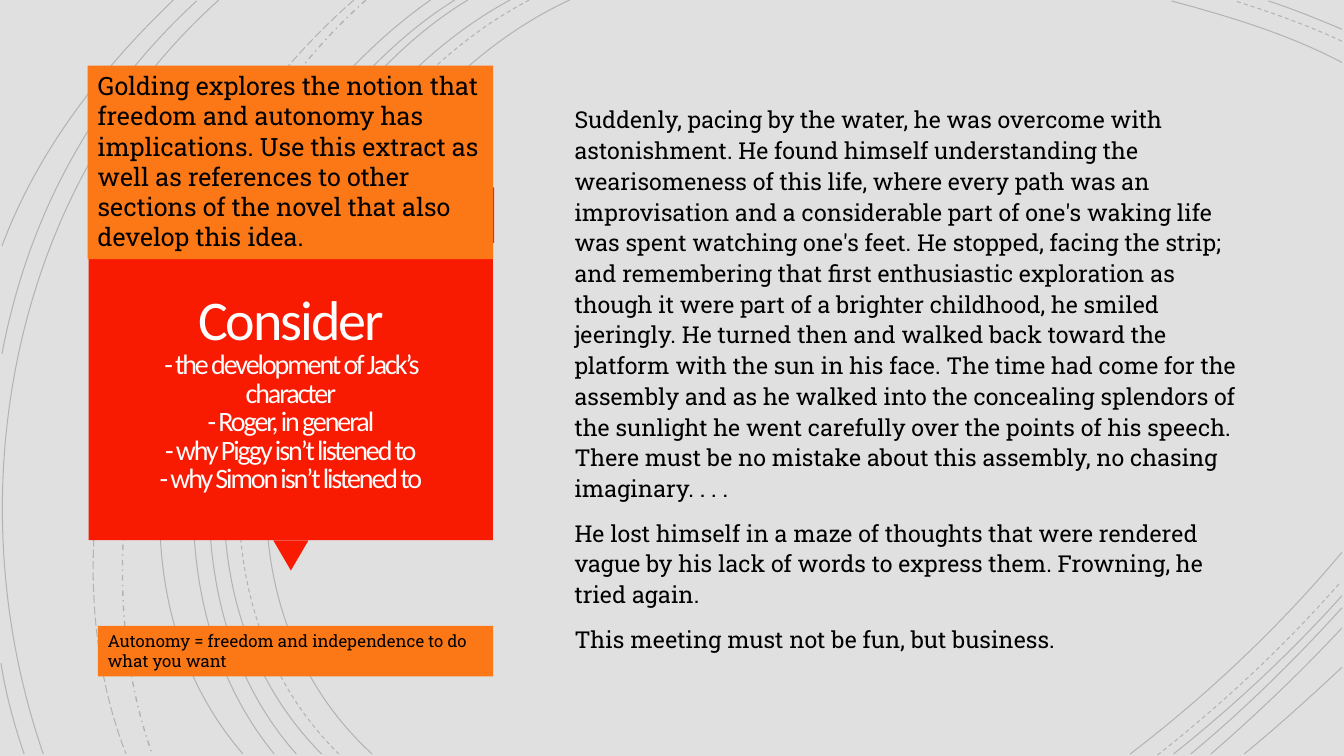
from lxml import etree
from pptx import Presentation
from pptx.dml.color import RGBColor
from pptx.enum.dml import MSO_LINE
from pptx.enum.shapes import MSO_SHAPE
from pptx.enum.text import MSO_ANCHOR, MSO_AUTO_SIZE, PP_ALIGN
from pptx.oxml.ns import qn
from pptx.util import Inches, Pt

SOLID, DASH = MSO_LINE.SOLID, MSO_LINE.DASH
DASH_DOT, LONG_DASH = MSO_LINE.DASH_DOT, MSO_LINE.LONG_DASH
RECTANGLE, TRIANGLE = MSO_SHAPE.RECTANGLE, MSO_SHAPE.ISOSCELES_TRIANGLE
TOP, MIDDLE = MSO_ANCHOR.TOP, MSO_ANCHOR.MIDDLE
LEFT, CENTER = PP_ALIGN.LEFT, PP_ALIGN.CENTER
GROW, FIXED = MSO_AUTO_SIZE.SHAPE_TO_FIT_TEXT, MSO_AUTO_SIZE.NONE

COLORS = {"back": "E0E0E0", "red": "F81B02", "orange": "FC7715",
          "white": "FFFEFF", "black": "000000"}
SLAB, SANS = "Roboto Slab", "Calibri"

TASK = ("Golding explores the notion that freedom and autonomy has implications. "
        "Use this extract as well as references to other sections of the novel "
        "that also develop this idea.")
DEFINITION = "Autonomy = freedom and independence to do what you want"
CONSIDER = [("Consider", 40),
            ("- the development of Jack’s character", 20),
            ("- Roger, in general", 20),
            ("- why Piggy isn’t listened to", 20),
            ("- why Simon isn’t listened to", 20)]
EXTRACT = [
    "Suddenly, pacing by the water, he was overcome with astonishment. He found "
    "himself understanding the wearisomeness of this life, where every path was an "
    "improvisation and a considerable part of one's waking life was spent watching "
    "one's feet. He stopped, facing the strip; and remembering that first "
    "enthusiastic exploration as though it were part of a brighter childhood, he "
    "smiled jeeringly. He turned then and walked back toward the platform with the "
    "sun in his face. The time had come for the assembly and as he walked into the "
    "concealing splendors of the sunlight he went carefully over the points of his "
    "speech. There must be no mistake about this assembly, no chasing imaginary. . . .",
    "He lost himself in a maze of thoughts that were rendered vague by his lack of "
    "words to express them. Frowning, he tried again.",
    "This meeting must not be fun, but business.",
]

ARCS = [
    ((5.65, 0), (3.15, 1.15), (1.43, 5.4), (3.69, 7.48), SOLID),
    ((13.31, 0.62), (12.78, 0.34), (12.18, 0.16), (11.62, 0.01), SOLID),
    ((11.21, 7.48), (11.97, 6.9), (12.69, 6.22), (13.31, 5.48), SOLID),
    ((5.25, 0), (2.85, 1.25), (1.23, 5.37), (3.36, 7.48), DASH),
    ((13.31, 0.41), (12.97, 0.25), (12.6, 0.12), (12.25, 0.01), DASH),
    ((11.48, 7.49), (12.13, 6.98), (12.75, 6.4), (13.3, 5.77), DASH),
    ((5.06, 0), (2.7, 1.27), (1.1, 5.37), (3.19, 7.48), SOLID),
    ((13.31, 0.29), (13.07, 0.19), (12.83, 0.09), (12.58, 0.01), SOLID),
    ((11.64, 7.48), (12.23, 7.01), (12.8, 6.48), (13.31, 5.91), SOLID),
    ((4.64, 0), (2.44, 1.33), (1.1, 5.41), (2.94, 7.48), SOLID),
    ((11.81, 7.48), (12.34, 7.04), (12.84, 6.55), (13.31, 6.03), SOLID),
    ((4.51, 0), (2.31, 1.38), (0.97, 5.33), (2.72, 7.48), SOLID),
    ((12.01, 7.48), (12.46, 7.09), (12.9, 6.67), (13.31, 6.23), SOLID),
    ((4.27, 0), (2.17, 1.47), (0.53, 5.29), (2.41, 7.48), SOLID),
    ((12.34, 7.48), (12.67, 7.21), (12.99, 6.92), (13.31, 6.62), SOLID),
    ((3.63, 0), (1.76, 1.66), (0.65, 5.09), (1.51, 7.48), DASH_DOT),
    ((3.51, 0), (1.57, 1.69), (0.29, 4.99), (1.25, 7.48), LONG_DASH),
    ((2.17, 0), (0.11, 1.85), (-0.46, 4.9), (0.43, 7.48), SOLID),
    ((1.95, 0.01), (0.92, 0.96), (0.28, 2.14), (0.02, 3.51), SOLID),
    ((0.01, 6.58), (0.06, 6.89), (0.14, 7.19), (0.24, 7.48), SOLID),
    ((1.72, 0), (1, 0.69), (0.37, 1.5), (0.02, 2.44), SOLID),
]


def color(name):
    return RGBColor.from_string(COLORS[name])


def bend(arc):
    segments = arc._element.findall(".//" + qn("a:lnTo"))
    outline = segments[0].getparent()
    curve = etree.SubElement(outline, qn("a:cubicBezTo"))
    for segment in segments:
        curve.append(segment[0])
        outline.remove(segment)


def add_arc(page, *corners, dash):
    start, *others = [tuple(map(Inches, corner)) for corner in corners]
    builder = page.shapes.build_freeform(*start)
    builder.add_line_segments(others, close=False)
    arc = builder.convert_to_shape()
    bend(arc)
    arc.shadow.inherit = False
    arc.fill.background()
    arc.line.width = Pt(1 if dash == DASH_DOT else 0.75)
    arc.line.color.rgb = color("black")
    arc.line.dash_style = dash
    ink = arc.line._ln.find(".//" + qn("a:srgbClr"))
    etree.SubElement(ink, qn("a:alpha")).set("val", "20000")


def add_panel(page, kind, place):
    panel = page.shapes.add_shape(kind, *map(Inches, place))
    panel.shadow.inherit = False
    panel.fill.solid()
    panel.fill.fore_color.rgb = color("red")
    panel.line.fill.background()
    return panel


def add_text_box(page, place, fill=None, anchor=TOP, size_mode=FIXED):
    box = page.shapes.add_textbox(*map(Inches, place))
    if fill:
        box.fill.solid()
        box.fill.fore_color.rgb = color(fill)
    frame = box.text_frame
    frame.word_wrap = True
    frame.auto_size = size_mode
    frame.vertical_anchor = anchor
    return frame


def add_span(para, text, size, font=SLAB, ink="black"):
    span = para.add_run()
    span.text = text
    span.font.size = Pt(size)
    span.font.name = font
    span.font.color.rgb = color(ink)
    return span


def add_title(page):
    frame = add_text_box(page, (0.97, 2.57, 3.83, 2.69), anchor=MIDDLE)
    frame.margin_left = frame.margin_right = Inches(0.25)
    frame.margin_top = frame.margin_bottom = Inches(0.25)
    para = frame.paragraphs[0]
    para.alignment = CENTER
    para.line_spacing = 0.85
    for index, (text, size) in enumerate(CONSIDER):
        if index:
            para.add_line_break()
        span = add_span(para, text, size, SANS, "white")
        span.font._element.set("spc", "-150")


def add_extract(page):
    frame = add_text_box(page, (5.6, 0.88, 6.87, 5.74), anchor=MIDDLE)
    for index, text in enumerate(EXTRACT):
        para = frame.add_paragraph() if index else frame.paragraphs[0]
        para.alignment = LEFT
        para.line_spacing = 1.1
        para.space_before = Pt(10)
        add_span(para, text, 16.65)


def main():
    deck = Presentation()
    deck.slide_width, deck.slide_height = Inches(13.33), Inches(7.5)
    page = deck.slides.add_slide(deck.slide_layouts[6])
    page.background.fill.solid()
    page.background.fill.fore_color.rgb = color("back")

    for *corners, dash in ARCS:
        add_arc(page, *corners, dash=dash)
    add_panel(page, RECTANGLE, (0.88, 1.86, 4.02, 0.55))
    pointer = add_panel(page, TRIANGLE, (2.71, 5.36, 0.35, 0.3))
    pointer.rotation = 180
    add_panel(page, RECTANGLE, (0.88, 2.49, 4.01, 2.87))
    add_title(page)
    add_extract(page)
    for text, size, place in ((TASK, 18, (0.87, 0.65, 4.02, 1.92)),
                              (DEFINITION, 12, (0.97, 6.21, 3.92, 0.5))):
        frame = add_text_box(page, place, "orange", size_mode=GROW)
        add_span(frame.paragraphs[0], text, size)
    deck.save("out.pptx")


if __name__ == "__main__":
    main()
